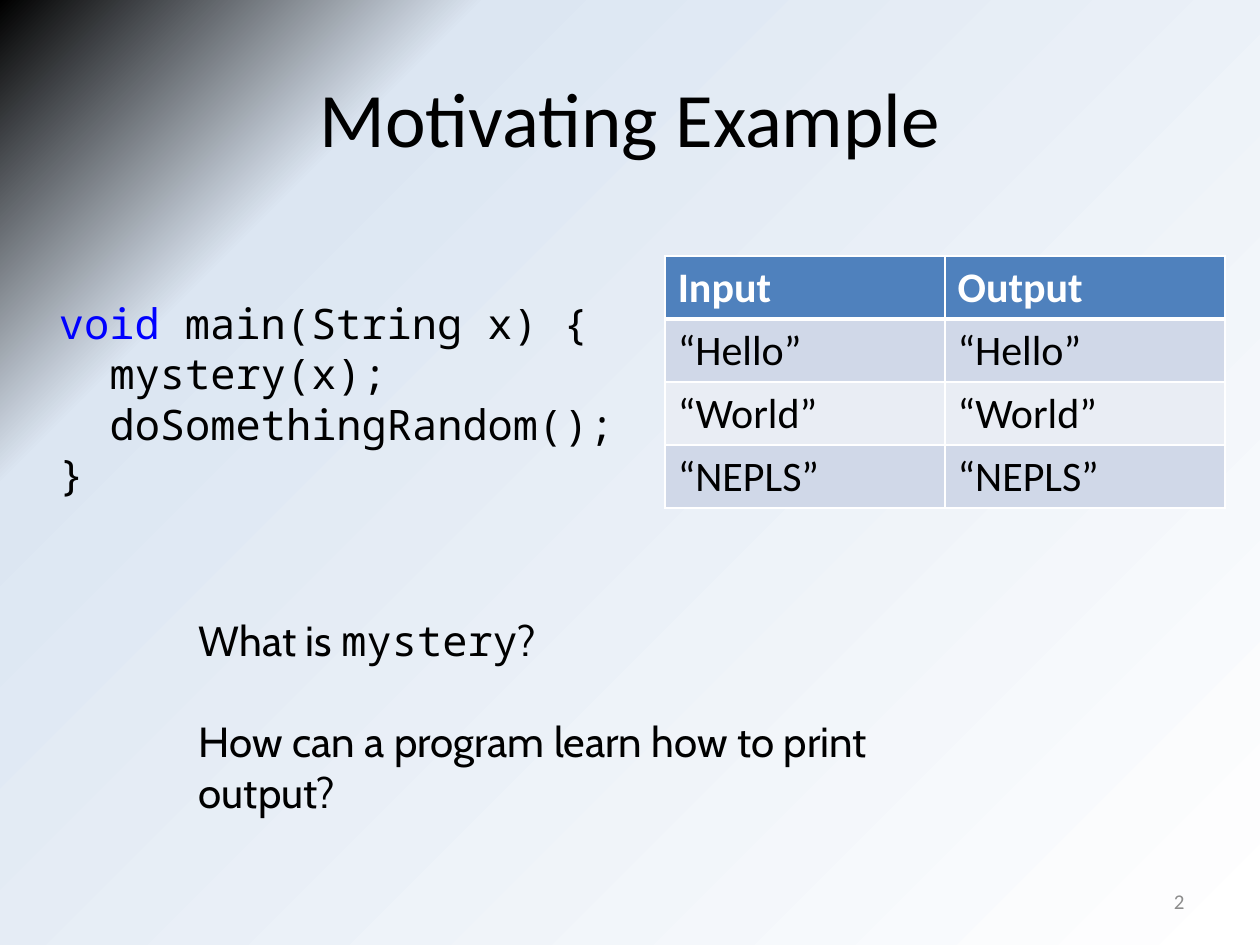
"""Build the motivating example slide with its code, table and questions."""
from dataclasses import dataclass

from lxml import etree
from pptx import Presentation
from pptx.dml.color import RGBColor
from pptx.enum.text import MSO_ANCHOR, PP_ALIGN
from pptx.oxml.ns import qn
from pptx.util import Cm, Pt

LEFT, CENTER, RIGHT = PP_ALIGN.LEFT, PP_ALIGN.CENTER, PP_ALIGN.RIGHT
TOP, MIDDLE = MSO_ANCHOR.TOP, MSO_ANCHOR.MIDDLE

BLACK = RGBColor(0x00, 0x00, 0x00)
WHITE = RGBColor(0xFF, 0xFF, 0xFF)
PALE_BLUE = RGBColor(0xDC, 0xE6, 0xF2)
KEYWORD_BLUE = RGBColor(0x00, 0x00, 0xFF)
NUMBER_GRAY = RGBColor(0x8C, 0x8C, 0x8C)
HEADER_BLUE = RGBColor(0x4F, 0x81, 0xBD)
BAND_DARK = RGBColor(0xD0, 0xD8, 0xE8)
BAND_LIGHT = RGBColor(0xE9, 0xED, 0xF4)

BODY, CODE, PROSE = "Calibri", "Noto Sans Mono", "Cabin"
CODE_INDENT = Cm(1.02)
BACKGROUND_STOPS = [(0, WHITE), (78, PALE_BLUE), (100, BLACK)]
TABLE_ROWS = [
    ("Input", "Output"),
    ("“Hello”", "“Hello”"),
    ("“World”", "“World”"),
    ("“NEPLS”", "“NEPLS”"),
]


@dataclass
class Span:
    text: str
    font: str = BODY
    color: RGBColor = BLACK


@dataclass
class Line:
    spans: list[Span]
    indent: int = 0
    space_before: float = 0


@dataclass
class TextBlock:
    left: float
    top: float
    width: float
    height: float
    lines: list[Line]
    size: int = 24
    align: PP_ALIGN = LEFT
    anchor: MSO_ANCHOR = TOP


TEXT_BLOCKS = [
    TextBlock(1.27, 0.76, 22.86, 3.18, [Line([Span("Motivating Example")])],
              size=44, align=CENTER, anchor=MIDDLE),
    TextBlock(0.94, 5.87, 11.81, 4.37, [
        Line([Span("void ", CODE, KEYWORD_BLUE), Span("main(String x) {", CODE)]),
        Line([Span("mystery(x);", CODE)], indent=CODE_INDENT),
        Line([Span("doSomethingRandom();", CODE)], indent=CODE_INDENT),
        Line([Span("}", CODE)]),
    ]),
    TextBlock(3.76, 12.27, 16.74, 4.37, [
        Line([Span("What is ", PROSE), Span("mystery", CODE), Span("?", PROSE)]),
        Line([Span("How can a program learn how to print output?", PROSE)],
             space_before=28.8),
    ]),
    TextBlock(18.21, 17.65, 5.92, 1.02, [Line([Span("2", color=NUMBER_GRAY)])],
              size=12, align=RIGHT, anchor=MIDDLE),
]


def add_span(para, text: str, *, font: str = BODY, size: int = 24,
             color: RGBColor = BLACK, bold: bool = False) -> None:
    span = para.add_run()
    span.text = text
    span.font.name = font
    span.font.size = Pt(size)
    span.font.bold = bold
    span.font.color.rgb = color


def add_color(parent, color: RGBColor) -> None:
    etree.SubElement(parent, qn("a:srgbClr"), val=str(color))


def paint_background(page) -> None:
    page.background.fill.gradient()
    gradient = page.element.find(".//" + qn("a:gradFill"))
    for child in list(gradient):
        gradient.remove(child)
    stops = etree.SubElement(gradient, qn("a:gsLst"))
    for percent, color in BACKGROUND_STOPS:
        add_color(etree.SubElement(stops, qn("a:gs"), pos=str(percent * 1000)), color)
    circle = etree.SubElement(gradient, qn("a:path"))
    circle.set("path", "circle")
    etree.SubElement(circle, qn("a:fillToRect"), l="100000", t="100000")


def add_text_block(page, block: TextBlock) -> None:
    box = page.shapes.add_textbox(Cm(block.left), Cm(block.top),
                                  Cm(block.width), Cm(block.height))
    frame = box.text_frame
    frame.word_wrap = True
    frame.vertical_anchor = block.anchor
    for index, line in enumerate(block.lines):
        para = frame.add_paragraph() if index else frame.paragraphs[0]
        para.alignment = block.align
        para.space_before = Pt(line.space_before)
        if line.indent:
            para._p.get_or_add_pPr().set("marL", str(line.indent))
        for span in line.spans:
            add_span(para, span.text, font=span.font, size=block.size, color=span.color)


def add_border(cell, side: str, points: int) -> None:
    border = etree.SubElement(cell._tc.get_or_add_tcPr(), qn(f"a:ln{side}"),
                              w=str(Pt(points)))
    add_color(etree.SubElement(border, qn("a:solidFill")), WHITE)


def add_example_table(page) -> None:
    row_count, column_count = len(TABLE_ROWS), len(TABLE_ROWS[0])
    table = page.shapes.add_table(row_count, column_count, Cm(13.41), Cm(5.16),
                                  Cm(11.28), Cm(5.08)).table
    for row, texts in enumerate(TABLE_ROWS):
        header = row == 0
        band = BAND_DARK if row % 2 else BAND_LIGHT
        for column, text in enumerate(texts):
            cell = table.cell(row, column)
            widths = {"L": 1, "R": 1, "T": 3 if row == 1 else 1, "B": 3 if header else 1}
            for side, points in widths.items():
                add_border(cell, side, points)
            cell.fill.solid()
            cell.fill.fore_color.rgb = HEADER_BLUE if header else band
            add_span(cell.text_frame.paragraphs[0], text,
                     color=WHITE if header else BLACK, bold=header)


def main() -> None:
    deck = Presentation()
    deck.slide_width, deck.slide_height = Cm(25.4), Cm(19.05)
    page = deck.slides.add_slide(deck.slide_layouts[6])
    paint_background(page)
    for block in TEXT_BLOCKS:
        add_text_block(page, block)
    add_example_table(page)
    deck.save("out.pptx")


if __name__ == "__main__":
    main()
